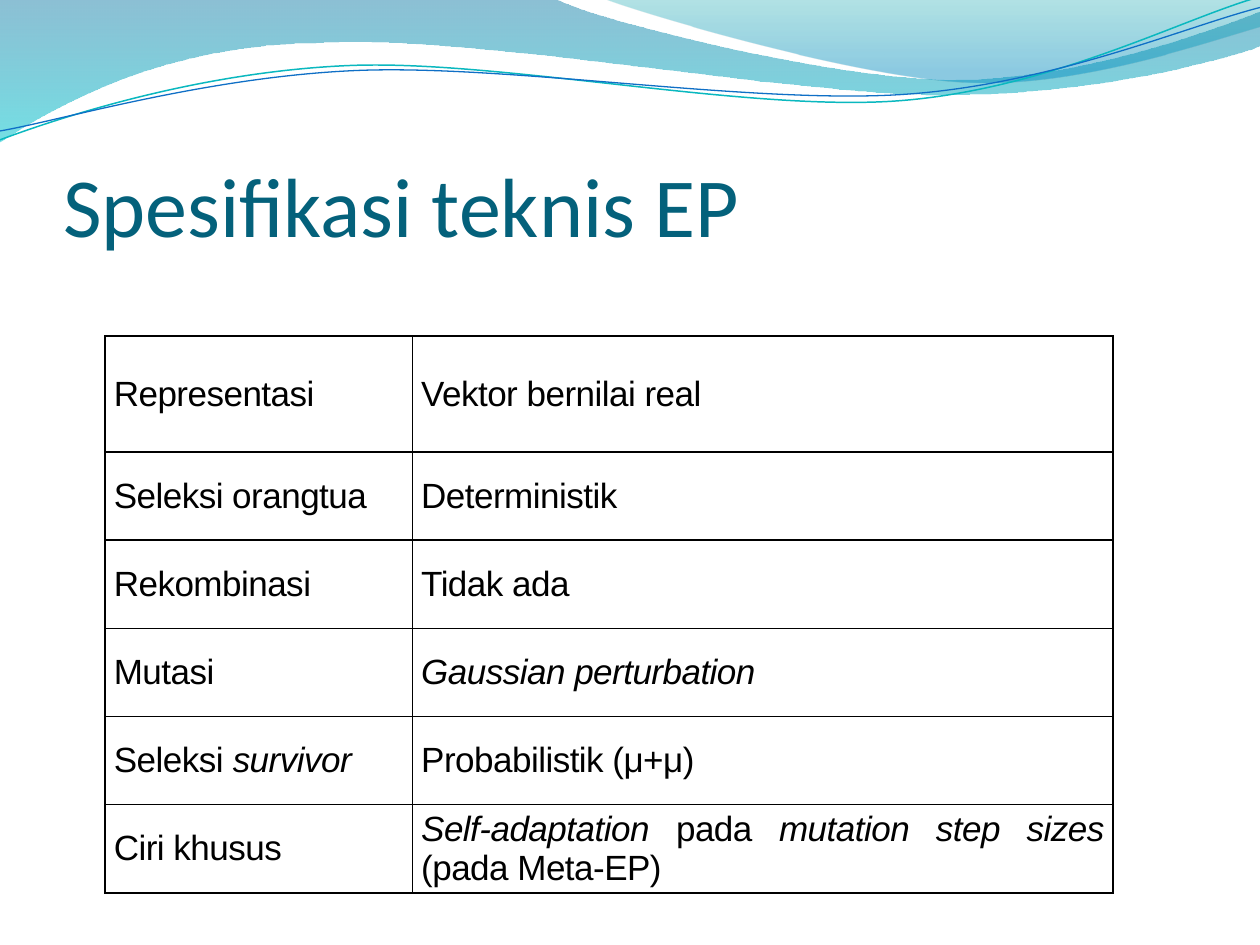
"""Build the slide with the technical specification table of EP."""
from dataclasses import dataclass
from math import cos, radians, sin
from typing import Optional

from lxml.etree import SubElement
from pptx import Presentation
from pptx.dml.color import RGBColor
from pptx.enum.text import MSO_ANCHOR, MSO_AUTO_SIZE, PP_ALIGN
from pptx.oxml.ns import qn
from pptx.util import Emu, Inches, Pt

SLIDE_WIDTH, SLIDE_HEIGHT = Inches(10), Inches(7.5)
GRID_COLUMNS = 10


@dataclass(frozen=True)
class Theme:
    title_font: str = "Calibri"
    body_font: str = "Arial"
    title_size: float = 48
    body_size: float = 20
    title_color: str = "04617B"
    body_color: str = "000000"
    deep_blue: str = "0074A1"
    cyan: str = "00C6CF"
    teal: str = "00A1A9"
    sky_blue: str = "008BBF"
    line_teal: str = "0AB8BF"
    line_blue: str = "0F6FC6"


@dataclass(frozen=True)
class GradientStop:
    position: float
    color: str
    opacity: int


@dataclass(frozen=True)
class Wave:
    start: tuple
    segments: tuple
    stops: tuple = ()
    line_color: Optional[str] = None
    line_width: float = 0
    tilt: float = 0
    center: tuple = (0, 0)


@dataclass(frozen=True)
class Phrase:
    text: str
    italic: bool = False


THEME = Theme()
WAVES = (
    Wave((0, -0.01), (
        (4.4, -0.01),
        (4.76, 0.17, 6.64, 0.63, 7.58, 0.63),
        (8.53, 0.63, 9.58, 0.26, 10, 0.09),
        (10.01, 0.36),
        (9.83, 0.44, 8.7, 0.76, 7.46, 0.75),
        (6.22, 0.75, 3.82, 0.28, 2.57, 0.34),
        (1.29, 0.35, 0.46, 0.83, -0.01, 1.13),
        (0, -0.01),
    ), stops=(GradientStop(0, THEME.deep_blue, 45), GradientStop(1, THEME.cyan, 55))),
    Wave((4.79, -0.01), (
        (5.09, 0.11, 6.82, 0.62, 7.69, 0.65),
        (8.56, 0.69, 9.61, 0.32, 10, 0.21),
        (10, 0),
        (4.79, -0.01),
    ), stops=(GradientStop(0, THEME.teal, 30), GradientStop(0.8, THEME.sky_blue, 45))),
    Wave((0, 1.11), (
        (0.48, 0.93, 1.58, 0.57, 2.77, 0.52),
        (3.95, 0.47, 5.93, 0.89, 7.13, 0.8),
        (8.33, 0.71, 9.38, 0.15, 9.98, -0.02),
    ), line_color=THEME.line_teal, line_width=0.85, tilt=-2.7, center=(4.99, 0.58)),
    Wave((0, 1.04), (
        (0.47, 0.96, 1.64, 0.61, 2.83, 0.56),
        (4.03, 0.51, 5.97, 0.83, 7.17, 0.75),
        (8.36, 0.67, 9.41, 0.21, 10, 0.06),
    ), line_color=THEME.line_blue, line_width=0.75, tilt=-2.7, center=(5, 0.59)),
)
TABLE_LEFT, TABLE_TOP = GRID_COLUMNS / 12, 8 / 3
COLUMN_WIDTHS = (2.44, 5.56)
ROW_HEIGHTS = (0.92,) + (0.7,) * 5
SPECIFICATIONS = (
    ((Phrase("Representasi"),), (Phrase("Vektor bernilai real"),)),
    ((Phrase("Seleksi orangtua"),), (Phrase("Deterministik"),)),
    ((Phrase("Rekombinasi"),), (Phrase("Tidak ada "),)),
    ((Phrase("Mutasi"),), (Phrase("Gaussian perturbation", True),)),
    ((Phrase("Seleksi "), Phrase("survivor", True)), (Phrase("Probabilistik (μ+μ)"),)),
    ((Phrase("Ciri khusus"),),
     (Phrase("Self-adaptation ", True), Phrase("pada "),
      Phrase("mutation step sizes", True), Phrase(" (pada Meta-EP)"))),
)


def grid(cells: float) -> Emu:
    """Turn a number of square grid cells into a length."""
    return Emu(round(cells * SLIDE_WIDTH / GRID_COLUMNS))


def level_point(wave: Wave, x: float, y: float) -> tuple:
    """Place a point as it lies before the wave is tilted."""
    angle = radians(-wave.tilt)
    across, down = x - wave.center[0], y - wave.center[1]
    return (grid(wave.center[0] + across * cos(angle) - down * sin(angle)),
            grid(wave.center[1] + across * sin(angle) + down * cos(angle)))


def bend_segments(shape, segments: tuple) -> None:
    """Turn each run of three lines that stands for a cubic into one curve."""
    lines = iter(list(shape.element.spPr.iter(qn("a:lnTo"))))
    for segment in segments:
        line = next(lines)
        if len(segment) == 6:
            line.tag = qn("a:cubicBezTo")
            for _ in range(2):
                control = next(lines)
                line.append(control[0])
                control.getparent().remove(control)


def draw_wave(slide, wave: Wave) -> None:
    """Draw a gradient wave or a thin wave line."""
    points = [level_point(wave, *segment[index:index + 2])
              for segment in wave.segments for index in range(0, len(segment), 2)]
    builder = slide.shapes.build_freeform(*level_point(wave, *wave.start))
    builder.add_line_segments(points, close=bool(wave.stops))
    shape = builder.convert_to_shape()
    bend_segments(shape, wave.segments)
    shape.shadow.inherit = False
    shape.rotation = wave.tilt
    if not wave.stops:
        shape.fill.background()
        shape.line.color.rgb = RGBColor.from_string(wave.line_color)
        shape.line.width = Pt(wave.line_width)
        return
    shape.line.fill.background()
    shape.fill.gradient()
    shape.fill.gradient_angle = 270
    for gradient_stop, stop in zip(shape.fill.gradient_stops, wave.stops):
        gradient_stop.position = stop.position
        gradient_stop.color.rgb = RGBColor.from_string(stop.color)
    colors = shape.element.spPr.find(qn("a:gradFill")).iter(qn("a:srgbClr"))
    for color, stop in zip(colors, wave.stops):
        SubElement(color, qn("a:alpha"), val=str(stop.opacity * 1000))


def add_phrase(paragraph, phrase: Phrase, font_name: str, size: float, color: str):
    """Add one formatted run to a paragraph."""
    run = paragraph.add_run()
    run.text = phrase.text
    run.font.name = font_name
    run.font.size = Pt(size)
    run.font.italic = phrase.italic
    run.font.color.rgb = RGBColor.from_string(color)
    return run


def format_title(slide, text: str) -> None:
    """Place the title placeholder above the waves and fill in its text."""
    title = slide.shapes.title
    title.element.getparent().append(title.element)
    title.left, title.top, title.width, title.height = map(grid, (0.5, 0.77, 9, 1.25))
    frame = title.text_frame
    frame.auto_size = MSO_AUTO_SIZE.NONE
    frame.vertical_anchor = MSO_ANCHOR.BOTTOM
    frame.margin_left = frame.margin_right = frame.margin_bottom = 0
    frame.margin_top = grid(0.05)
    paragraph = frame.paragraphs[0]
    paragraph.alignment = PP_ALIGN.LEFT
    add_phrase(paragraph, Phrase(text), THEME.title_font, THEME.title_size, THEME.title_color)


def format_cell(cell, phrases: tuple) -> None:
    """Give a table cell its borders and its text."""
    properties = cell._tc.get_or_add_tcPr()
    for side in ("a:lnL", "a:lnR", "a:lnT", "a:lnB"):
        border = SubElement(properties, qn(side), w=str(Pt(1)))
        SubElement(SubElement(border, qn("a:solidFill")), qn("a:srgbClr"), val=THEME.body_color)
    cell.fill.background()
    cell.vertical_anchor = MSO_ANCHOR.MIDDLE
    cell.margin_left = cell.margin_right = grid(0.07)
    cell.margin_top = cell.margin_bottom = 0
    paragraph = cell.text_frame.paragraphs[0]
    paragraph.alignment = PP_ALIGN.JUSTIFY
    paragraph.space_before, paragraph.space_after = Pt(3), Pt(6)
    for phrase in phrases:
        run = add_phrase(paragraph, phrase, THEME.body_font, THEME.body_size, THEME.body_color)
        run._r.get_or_add_rPr().set("spc", "-30")


def draw_table(slide) -> None:
    """Draw the specification table."""
    frame = slide.shapes.add_table(len(ROW_HEIGHTS), len(COLUMN_WIDTHS), grid(TABLE_LEFT),
                                   grid(TABLE_TOP), grid(sum(COLUMN_WIDTHS)), grid(sum(ROW_HEIGHTS)))
    table = frame.table
    table.first_row = table.horz_banding = False
    for column, width in zip(table.columns, COLUMN_WIDTHS):
        column.width = grid(width)
    for row, height, entries in zip(table.rows, ROW_HEIGHTS, SPECIFICATIONS):
        row.height = grid(height)
        for cell, phrases in zip(row.cells, entries):
            format_cell(cell, phrases)


presentation = Presentation()
presentation.slide_width, presentation.slide_height = SLIDE_WIDTH, SLIDE_HEIGHT
main_slide = presentation.slides.add_slide(presentation.slide_layouts[5])
for main_wave in WAVES:
    draw_wave(main_slide, main_wave)
format_title(main_slide, "Spesifikasi teknis EP")
draw_table(main_slide)
presentation.save("out.pptx")
